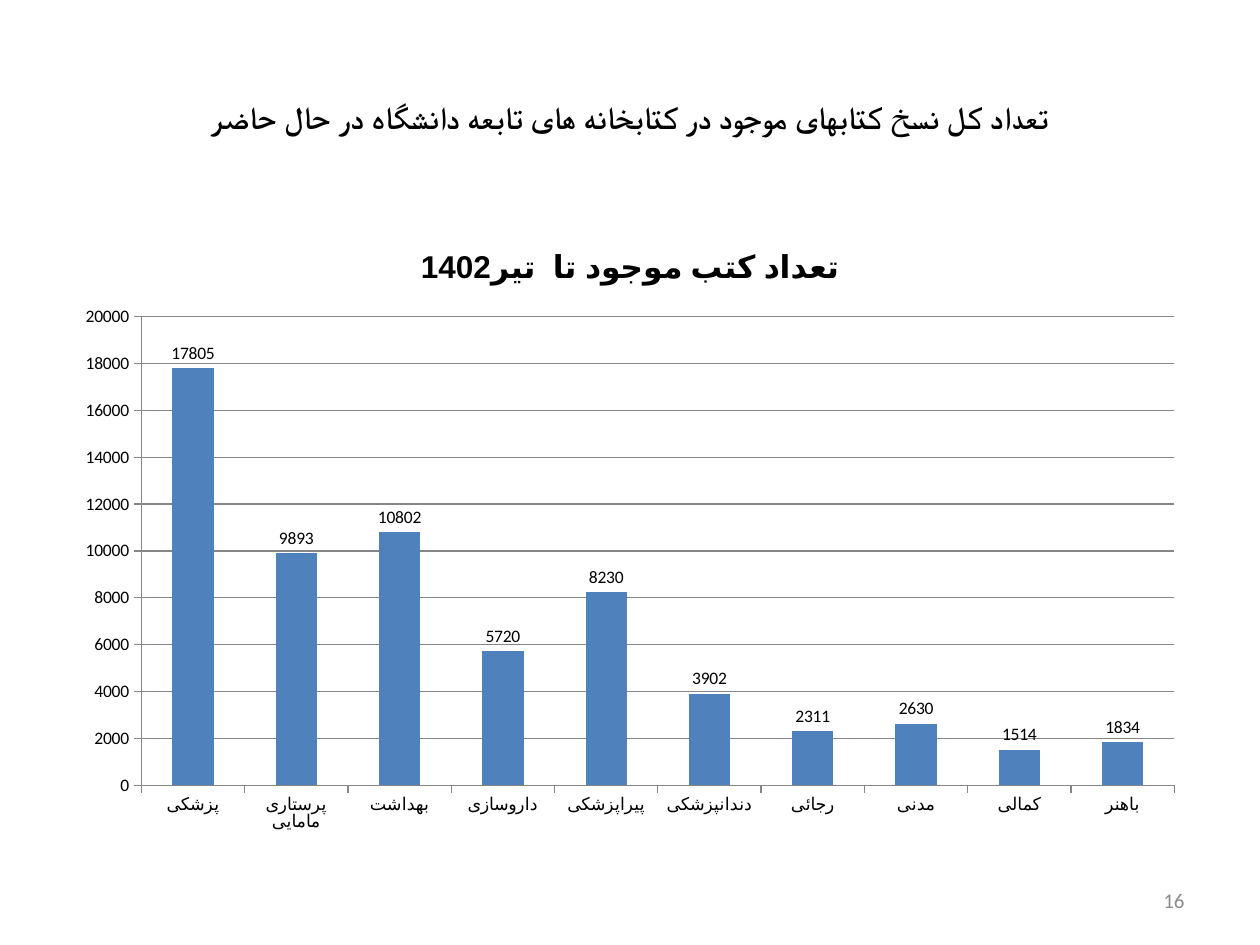
from dataclasses import dataclass

import pptx
import pptx.chart.data
import pptx.dml.color
import pptx.enum.chart
import pptx.enum.text
import pptx.oxml
import pptx.oxml.ns
import pptx.util

Cm = pptx.util.Cm
Color = pptx.dml.color.RGBColor
Align = pptx.enum.text.PP_ALIGN


@dataclass(frozen=True)
class Theme:
    heading_font: str = "Times New Roman"
    body_font: str = "Calibri"
    chart_title_script_font: str = "Arial"
    text: Color = Color(0, 0, 0)
    muted: Color = Color(0x8C, 0x8C, 0x8C)
    bar: Color = Color(0x4F, 0x81, 0xBD)
    line: Color = Color(0x86, 0x86, 0x86)
    heading_size: int = 18
    number_size: int = 12
    chart_size: int = 10


@dataclass(frozen=True)
class Label:
    text: str
    left: float
    top: float
    width: float
    height: float
    align: Align
    font: str
    size: int
    color: Color
    bold: bool = False


@dataclass(frozen=True)
class Library:
    name: str
    books: int


THEME = Theme()

LABELS = [
    Label("تعداد کل نسخ کتابهای موجود در کتابخانه های تابعه دانشگاه در حال حاضر",
          1.27, 0.76, 22.86, 3.18, Align.CENTER,
          THEME.heading_font, THEME.heading_size, THEME.text, True),
    Label("16", 18.2, 17.65, 5.93, 1.01, Align.RIGHT,
          THEME.body_font, THEME.number_size, THEME.muted),
]

CHART_TITLE = "تعداد کتب موجود تا  تیر1402"
LIBRARIES = [
    Library("پزشکی", 17805),
    Library("پرستاری مامایی", 9893),
    Library("بهداشت", 10802),
    Library("داروسازی", 5720),
    Library("پیراپزشکی", 8230),
    Library("دندانپزشکی", 3902),
    Library("رجائی", 2311),
    Library("مدنی", 2630),
    Library("کمالی", 1514),
    Library("باهنر", 1834),
]


def style_font(font, name: str, size: int, color: Color, bold: bool = False) -> None:
    font.name = name
    font.size = pptx.util.Pt(size)
    font.bold = bold
    font.color.rgb = color


def set_script_font(run, name: str) -> None:
    """Choose the font used for Persian letters."""
    element = pptx.oxml.parse_xml(
        f'<a:cs {pptx.oxml.ns.nsdecls("a")} typeface="{name}"/>')
    run.font._element.append(element)


def set_right_to_left(paragraph) -> None:
    paragraph._p.get_or_add_pPr().set("rtl", "1")


def add_label(slide, label: Label) -> None:
    shape = slide.shapes.add_textbox(
        Cm(label.left), Cm(label.top), Cm(label.width), Cm(label.height))
    text_frame = shape.text_frame
    text_frame.word_wrap = True
    text_frame.vertical_anchor = pptx.enum.text.MSO_ANCHOR.MIDDLE
    text_frame.text = label.text
    paragraph = text_frame.paragraphs[0]
    paragraph.alignment = label.align
    set_right_to_left(paragraph)
    run = paragraph.runs[0]
    style_font(run.font, label.font, label.size, label.color, label.bold)
    set_script_font(run, label.font)


def add_library_chart(slide, libraries: list[Library]) -> None:
    data = pptx.chart.data.CategoryChartData(number_format="General")
    data.categories = [library.name for library in libraries]
    data.add_series("Series 1", [library.books for library in libraries])
    chart = slide.shapes.add_chart(
        pptx.enum.chart.XL_CHART_TYPE.COLUMN_CLUSTERED,
        Cm(1.27), Cm(4.45), Cm(22.86), Cm(12.57), data).chart
    style_font(chart.font, THEME.body_font, THEME.chart_size, THEME.text)
    chart.has_legend = False

    # Chart title
    chart.has_title = True
    chart.chart_title.include_in_layout = False
    text_frame = chart.chart_title.text_frame
    text_frame.text = CHART_TITLE
    paragraph = text_frame.paragraphs[0]
    set_right_to_left(paragraph)
    run = paragraph.runs[0]
    style_font(run.font, THEME.body_font, THEME.heading_size, THEME.text, True)
    set_script_font(run, THEME.chart_title_script_font)

    # Axes and gridlines
    for axis in (chart.category_axis, chart.value_axis):
        axis.major_tick_mark = pptx.enum.chart.XL_TICK_MARK.OUTSIDE
        axis.minor_tick_mark = pptx.enum.chart.XL_TICK_MARK.NONE
        axis.format.line.color.rgb = THEME.line
    chart.value_axis.has_major_gridlines = True
    chart.value_axis.major_gridlines.format.line.color.rgb = THEME.line

    # Columns and their values
    plot = chart.plots[0]
    plot.gap_width = 150
    plot.vary_by_categories = False
    fill = plot.series[0].format.fill
    fill.solid()
    fill.fore_color.rgb = THEME.bar
    plot.has_data_labels = True
    labels = plot.data_labels
    labels.show_value = True
    labels.position = pptx.enum.chart.XL_LABEL_POSITION.OUTSIDE_END
    style_font(labels.font, THEME.body_font, THEME.chart_size, THEME.text)


def main() -> None:
    presentation = pptx.Presentation()
    presentation.slide_width = Cm(25.4)
    presentation.slide_height = Cm(19.05)
    slide = presentation.slides.add_slide(presentation.slide_layouts[6])
    for label in LABELS:
        add_label(slide, label)
    add_library_chart(slide, LIBRARIES)
    presentation.save("out.pptx")


if __name__ == "__main__":
    main()
